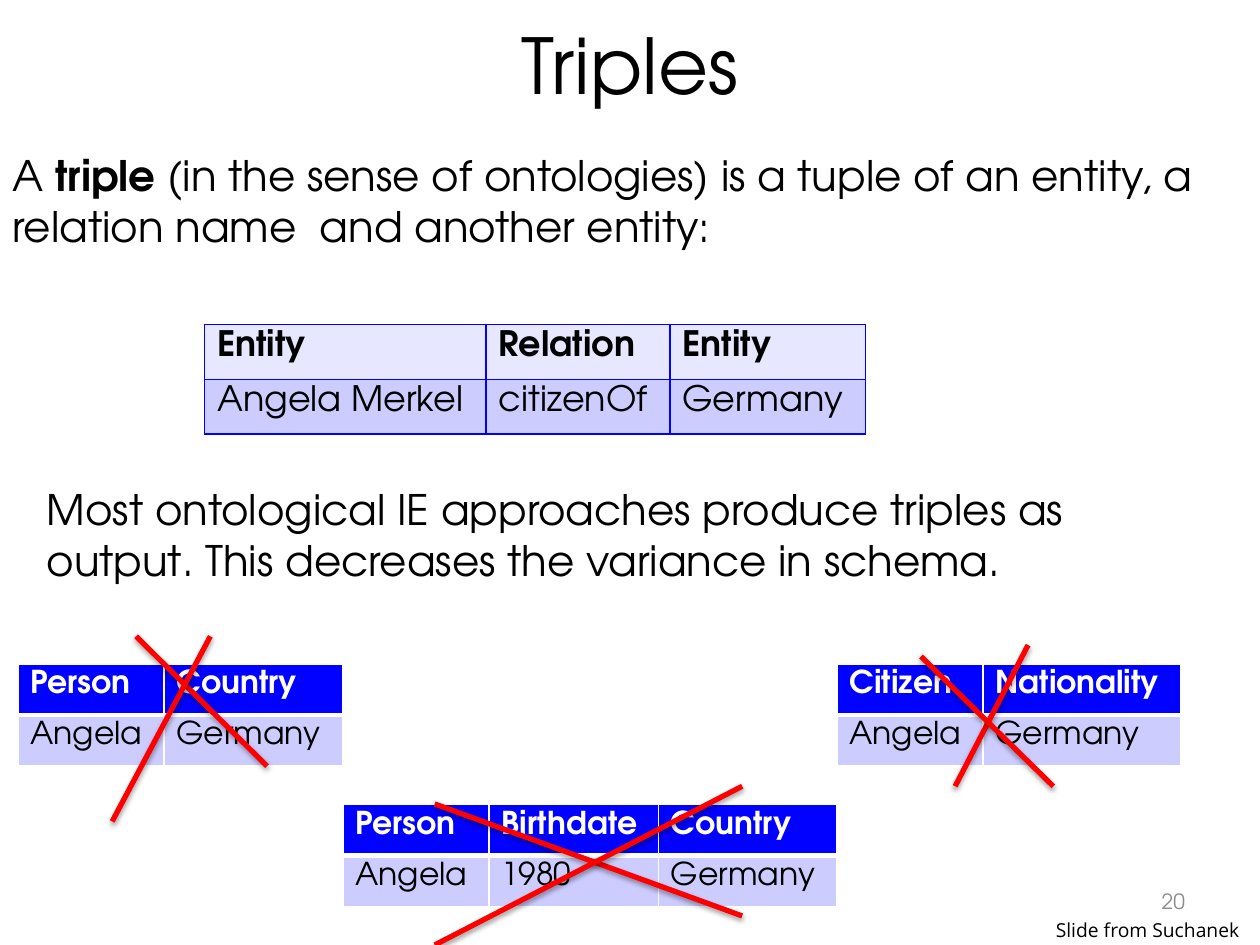
"""Build the slide about triples and the schemas they replace."""
from dataclasses import dataclass

from lxml.etree import SubElement
from pptx import Presentation
from pptx.dml.color import RGBColor
from pptx.enum.shapes import MSO_CONNECTOR as Connector
from pptx.enum.text import MSO_ANCHOR as Anchor, PP_ALIGN as Align
from pptx.oxml import parse_xml
from pptx.oxml.ns import nsdecls, qn
from pptx.util import Pt

BLACK = RGBColor(0, 0, 0)
WHITE = RGBColor(255, 255, 255)
GRAY = RGBColor(0x8C, 0x8C, 0x8C)
BLUE = RGBColor(0, 1, 255)
LAVENDER = RGBColor(0xCC, 0xCC, 0xFF)
PALE = RGBColor(0xE7, 0xE7, 0xFF)
RED = RGBColor(255, 0, 0)
FONT = "TeX Gyre Adventor"
SMALL_FONT = "Open Sans"
SHADOW = (
    f'<a:effectLst {nsdecls("a")}><a:outerShdw blurRad="40000" dist="20000" '
    'dir="5400000" rotWithShape="0"><a:srgbClr val="000000">'
    '<a:alpha val="38000"/></a:srgbClr></a:outerShdw></a:effectLst>'
)


@dataclass(frozen=True)
class Span:
    text: str
    bold: bool = False


@dataclass(frozen=True)
class TextBlock:
    spans: tuple[Span, ...]
    area: tuple[float, float, float, float]
    size: float = 24
    color: RGBColor = BLACK
    font: str = FONT
    align: Align = Align.LEFT
    anchor: Anchor = Anchor.TOP
    wrap: bool = True


@dataclass(frozen=True)
class TableLook:
    size: float
    header_color: RGBColor
    header_fill: RGBColor
    border: RGBColor
    rule: float


@dataclass(frozen=True)
class Grid:
    left: float
    top: float
    widths: tuple[float, ...]
    rows: tuple[tuple[str, ...], ...]
    look: TableLook
    row_height: float = 29.2


@dataclass(frozen=True)
class Stroke:
    start: tuple[float, float]
    end: tuple[float, float]


TRIPLE = TableLook(20, BLACK, PALE, BLUE, 1)
REJECTED = TableLook(18, WHITE, BLUE, WHITE, 3)

BLOCKS = (
    TextBlock((Span("20"),), (516.2, 500.5, 168, 28.8), 12, GRAY,
              align=Align.RIGHT, anchor=Anchor.MIDDLE),
    TextBlock((Span("A "), Span("triple", True),
               Span(" (in the sense of ontologies) is a tuple of an entity, "
                    "a relation name  and another entity:")),
              (0, 82, 701.3, 65.4)),
    TextBlock((Span("Most ontological IE approaches produce triples as output. "
                    "This decreases the variance in schema."),),
              (19.5, 273, 682.5, 65.4)),
    TextBlock((Span("Slide from Suchanek"),), (596.2, 521.3, 123.8, 20.6), 11,
              font=SMALL_FONT, wrap=False),
)
GRIDS = (
    Grid(116.9, 185.5, (160.8, 105.1, 111.8),
         (("Entity", "Relation", "Entity"),
          ("Angela Merkel", "citizenOf", "Germany")), TRIPLE),
    Grid(10.2, 379.4, (83.5, 102.2),
         (("Person", "Country"), ("Angela", "Germany")), REJECTED),
    Grid(195.9, 459.7, (83.5, 96.8, 102.2),
         (("Person", "Birthdate", "Country"),
          ("Angela", "1980", "Germany")), REJECTED),
    Grid(478.2, 379.4, (83.5, 113),
         (("Citizen", "Nationality"), ("Angela", "Germany")), REJECTED),
)
STROKES = (
    Stroke((77.8, 363.6), (152.6, 437.8)),
    Stroke((64.1, 469.4), (120.2, 363.6)),
    Stroke((545.8, 449.3), (587.5, 368.6)),
    Stroke((526.3, 375.1), (601.9, 449.3)),
    Stroke((248.4, 459.4), (424.1, 523.4)),
    Stroke((248.4, 540), (424.1, 449.3)),
)


def add_span(para, span: Span, size: float, color: RGBColor, font: str = FONT) -> None:
    run = para.add_run()
    run.text = span.text
    run.font.name = font
    run.font.size = Pt(size)
    run.font.bold = span.bold
    run.font.color.rgb = color


def add_title(page, text: str) -> None:
    title = page.shapes.title
    title.left, title.top, title.width, title.height = Pt(36), Pt(0), Pt(648), Pt(72.7)
    title.text_frame.vertical_anchor = Anchor.MIDDLE
    para = title.text_frame.paragraphs[0]
    para.alignment = Align.CENTER
    add_span(para, Span(text), 44, BLACK)


def add_block(page, block: TextBlock) -> None:
    box = page.shapes.add_textbox(*map(Pt, block.area))
    frame = box.text_frame
    frame.word_wrap = block.wrap
    frame.vertical_anchor = block.anchor
    para = frame.paragraphs[0]
    para.alignment = block.align
    for span in block.spans:
        add_span(para, span, block.size, block.color, block.font)


def set_borders(cell, color: RGBColor, top: float, bottom: float) -> None:
    properties = cell._tc.get_or_add_tcPr()
    for side, width in (("L", 1), ("R", 1), ("T", top), ("B", bottom)):
        line = SubElement(properties, qn(f"a:ln{side}"), w=str(Pt(width)))
        fill = SubElement(line, qn("a:solidFill"))
        SubElement(fill, qn("a:srgbClr"), val=str(color))


def add_grid(page, grid: Grid) -> None:
    look = grid.look
    height = grid.row_height * len(grid.rows)
    table = page.shapes.add_table(
        len(grid.rows), len(grid.widths), Pt(grid.left), Pt(grid.top),
        Pt(sum(grid.widths)), Pt(height)).table
    for column, width in zip(table.columns, grid.widths):
        column.width = Pt(width)
    for row_index, texts in enumerate(grid.rows):
        header = row_index == 0
        table.rows[row_index].height = Pt(grid.row_height)
        for column_index, text in enumerate(texts):
            cell = table.cell(row_index, column_index)
            top, bottom = (1, look.rule) if header else (look.rule, 1)
            set_borders(cell, look.border, top, bottom)
            cell.fill.solid()
            cell.fill.fore_color.rgb = look.header_fill if header else LAVENDER
            color = look.header_color if header else BLACK
            add_span(cell.text_frame.paragraphs[0], Span(text, header), look.size, color)


def add_stroke(page, stroke: Stroke) -> None:
    line = page.shapes.add_connector(
        Connector.STRAIGHT, *map(Pt, stroke.start + stroke.end))
    line.line.color.rgb = RED
    line.line.width = Pt(3)
    line._element.spPr.append(parse_xml(SHADOW))


def main() -> None:
    deck = Presentation()
    deck.slide_width, deck.slide_height = Pt(720), Pt(540)
    page = deck.slides.add_slide(deck.slide_layouts[5])
    add_title(page, "Triples")
    for block in BLOCKS:
        add_block(page, block)
    for grid in GRIDS:
        add_grid(page, grid)
    for stroke in STROKES:
        add_stroke(page, stroke)
    deck.save("out.pptx")


if __name__ == "__main__":
    main()
